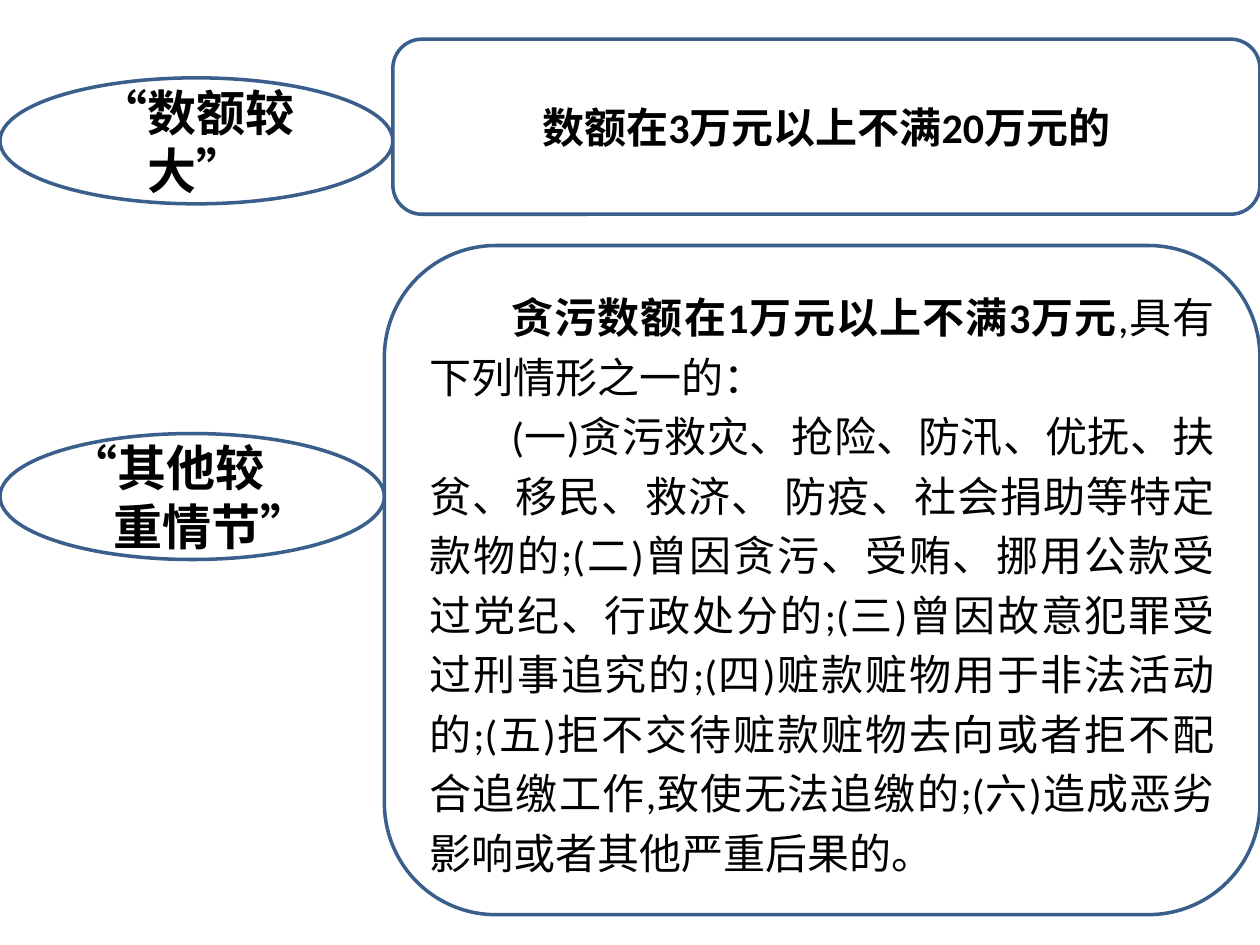
from pptx import Presentation
from pptx.dml.color import RGBColor
from pptx.enum.shapes import MSO_SHAPE
from pptx.enum.text import MSO_ANCHOR, PP_ALIGN
from pptx.util import Cm, Pt

SLIDE_WIDTH, SLIDE_HEIGHT = 25.4, 19.05
ELLIPSE_HEIGHT = 2.54
FONT = "Calibri"
WHITE, BLACK, BLUE = "FFFFFF", "000000", "3A5F8C"


def color(hex_string):
    return RGBColor.from_string(hex_string)


def add_outlined_shape(slide, kind, left, top, width, height):
    shape = slide.shapes.add_shape(kind, Cm(left), Cm(top), Cm(width), Cm(height))
    shape.shadow.inherit = False
    shape.fill.solid()
    shape.fill.fore_color.rgb = color(WHITE)
    shape.line.color.rgb = color(BLUE)
    shape.line.width = Pt(2)
    shape.text_frame.word_wrap = True
    shape.text_frame.vertical_anchor = MSO_ANCHOR.MIDDLE
    return shape


def write_paragraphs(shape, paragraphs, size, alignment, indents=(), line_spacing=None):
    """Each paragraph is a list of (text, bold) runs; indents are first-line indents in cm."""
    text_frame = shape.text_frame
    for index, runs in enumerate(paragraphs):
        paragraph = text_frame.add_paragraph() if index else text_frame.paragraphs[0]
        paragraph.alignment = alignment
        if line_spacing:
            paragraph.line_spacing = Pt(line_spacing)
        if indents:
            properties = paragraph._p.get_or_add_pPr()
            properties.set("marL", "0")
            properties.set("indent", str(Cm(indents[index])))
        for text, bold in runs:
            run = paragraph.add_run()
            run.text = text
            run.font.name = FONT
            run.font.size = Pt(size)
            run.font.bold = bold
            run.font.color.rgb = color(BLACK)


def add_rule_row(slide, top, height, label_width, label_offset):
    """Place a label ellipse, label_offset below top, and a box that fills the rest of the width."""
    label = add_outlined_shape(slide, MSO_SHAPE.OVAL, 0, top + label_offset,
                               label_width, ELLIPSE_HEIGHT)
    box = add_outlined_shape(slide, MSO_SHAPE.ROUNDED_RECTANGLE, label_width, top,
                             SLIDE_WIDTH - label_width, height)
    return label, box


def add_large_amount(slide):
    label, box = add_rule_row(slide, top=0.79, height=3.53, label_width=7.92, label_offset=0.78)
    write_paragraphs(label, [[("“数额较大”", True)]], 28, PP_ALIGN.CENTER)
    write_paragraphs(box, [[("数额在3万元以上不满20万元的", True)]], 24, PP_ALIGN.CENTER)


def add_other_circumstances(slide):
    label, box = add_rule_row(slide, top=4.95, height=13.49, label_width=7.75, label_offset=3.79)
    write_paragraphs(label, [[("“其他较", True)], [("重情节”", True)]], 28,
                     PP_ALIGN.LEFT, indents=(0, 0.9))
    circumstances = (
        "(一)贪污救灾、抢险、防汛、优抚、扶贫、移民、救济、 防疫、社会捐助等特定款物的;"
        "(二)曾因贪污、受贿、挪用公款受过党纪、行政处分的;"
        "(三)曾因故意犯罪受过刑事追究的;"
        "(四)赃款赃物用于非法活动的;"
        "(五)拒不交待赃款赃物去向或者拒不配合追缴工作,致使无法追缴的;"
        "(六)造成恶劣影响或者其他严重后果的。"
    )
    paragraphs = [
        [("贪污数额在1万元以上不满3万元", True), (",具有下列情形之一的：", False)],
        [(circumstances, False)],
    ]
    write_paragraphs(box, paragraphs, 24, PP_ALIGN.JUSTIFY, indents=(1.65, 1.65), line_spacing=34)


def main():
    presentation = Presentation()
    presentation.slide_width = Cm(SLIDE_WIDTH)
    presentation.slide_height = Cm(SLIDE_HEIGHT)
    slide = presentation.slides.add_slide(presentation.slide_layouts[6])
    add_large_amount(slide)
    add_other_circumstances(slide)
    presentation.save("out.pptx")


if __name__ == "__main__":
    main()
